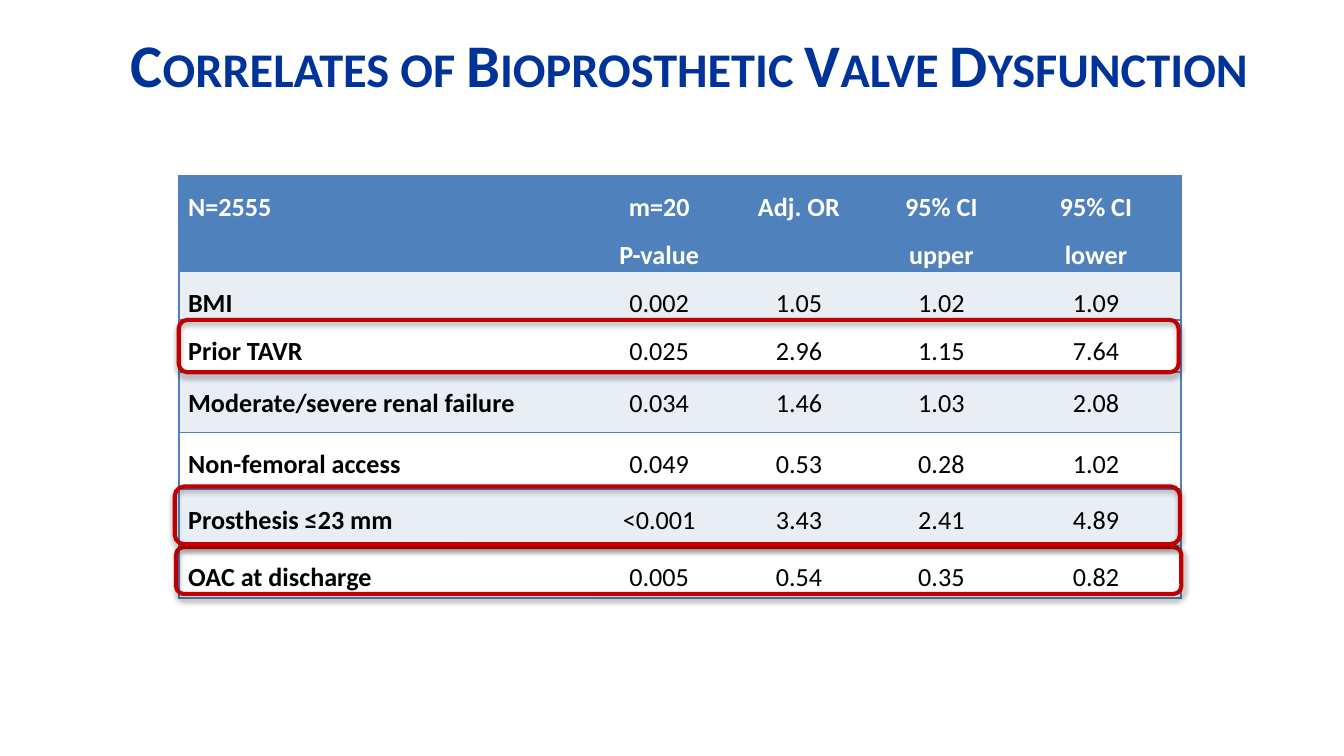
import itertools

import pptx
import pptx.dml.color
import pptx.enum.shapes
import pptx.enum.text
import pptx.oxml
import pptx.oxml.ns
import pptx.util

Inches, Pt = pptx.util.Inches, pptx.util.Pt
PP_ALIGN = pptx.enum.text.PP_ALIGN
ANCHOR = pptx.enum.text.MSO_ANCHOR

THEME = {
    "font": "Calibri", "title_size": 32.4, "cell_size": 14,
    "title": "003399", "header": "4F81BD", "band": "E9EDF4", "plain": "FFFFFF",
    "header_text": "FFFFFF", "body_text": "000000", "grid": "4F81BD",
    "highlight": "C00000", "shadow": "000000",
}
NS = pptx.oxml.ns.nsdecls("a")


def rgb(part):
    return pptx.dml.color.RGBColor.from_string(THEME[part])


def style_run(run, size, color, bold):
    formats = {"name": THEME["font"], "size": Pt(THEME[size]), "bold": bold}
    for attribute, value in formats.items():
        setattr(run.font, attribute, value)
    run.font.color.rgb = rgb(color)


# Widescreen slide, 16:9
deck = pptx.Presentation()
deck.slide_width = Inches(10)
deck.slide_height = deck.slide_width * 9 // 16
slide = deck.slides.add_slide(deck.slide_layouts[6])

# Title in small capitals
title = slide.shapes.add_textbox(Inches(0.63), 0, Inches(9), Inches(0.94)).text_frame
title.word_wrap = True
title.vertical_anchor = ANCHOR.MIDDLE
heading = title.paragraphs[0]
heading.alignment = PP_ALIGN.CENTER
heading_run = heading.add_run()
heading_run.text = "Correlates of Bioprosthetic Valve Dysfunction"
style_run(heading_run, "title_size", "title", True)
heading_run.font._element.set("cap", "small")

# Table grid
correlates = [
    ["N=2555", "m=20\nP-value", "Adj. OR", "95% CI upper", "95% CI lower"],
    ["BMI", "0.002", "1.05", "1.02", "1.09"],
    ["Prior TAVR", "0.025", "2.96", "1.15", "7.64"],
    ["Moderate/severe renal failure", "0.034", "1.46", "1.03", "2.08"],
    ["Non-femoral access", "0.049", "0.53", "0.28", "1.02"],
    ["Prosthesis ≤23 mm", "<0.001", "3.43", "2.41", "4.89"],
    ["OAC at discharge", "0.005", "0.54", "0.35", "0.82"],
]
left, top = 1.33, 1.31
col_widths = [3.08, 1.01, 1.07, 1.05, 1.25]
row_heights = [0.71, 0.36, 0.39, 0.45, 0.42, 0.42, 0.39]
row_tops = list(itertools.accumulate(row_heights, initial=top))
table_width = sum(col_widths)

frame = slide.shapes.add_table(
    len(row_heights), len(col_widths), Inches(left), Inches(top),
    Inches(table_width), Inches(sum(row_heights)))
table = frame.table
no_style = "{2D5ABB26-0587-4C30-8999-92F81FD0307C}"
table._tbl.tblPr.find(pptx.oxml.ns.qn("a:tableStyleId")).text = no_style
for column, width in zip(table.columns, col_widths):
    column.width = Inches(width)
for row, height in zip(table.rows, row_heights):
    row.height = Inches(height)

# Cells: outer sides and every horizontal line are ruled
cell_format = {
    "margin_left": Inches(0.07), "margin_right": Inches(0.07),
    "margin_top": 0, "margin_bottom": 0, "vertical_anchor": ANCHOR.TOP,
}
for r, texts in enumerate(correlates):
    for c, text in enumerate(texts):
        cell = table.cell(r, c)
        cell.text = text
        for attribute, value in cell_format.items():
            setattr(cell, attribute, value)
        sides = ["L"] * (c == 0) + ["R"] * (c == len(texts) - 1) + ["T", "B"]
        for side in sides:
            cell._tc.get_or_add_tcPr().append(pptx.oxml.parse_xml(
                f'<a:ln{side} {NS} w="{Pt(1)}"><a:solidFill>'
                f'<a:srgbClr val="{THEME["grid"]}"/></a:solidFill></a:ln{side}>'))
        cell.fill.solid()
        cell.fill.fore_color.rgb = rgb("header" if r == 0 else "band" if r % 2 else "plain")
        for paragraph in cell.text_frame.paragraphs:
            paragraph.line_spacing = 1.5
            paragraph.alignment = PP_ALIGN.CENTER if c else PP_ALIGN.LEFT
            if c:
                properties = paragraph._p.get_or_add_pPr()
                properties.set("marL", str(Inches(0.04)))
                properties.set("marR", str(Inches(0.06)))
            style_run(paragraph.runs[0], "cell_size",
                      "body_text" if r else "header_text", r == 0 or c == 0)

# Highlighted rows: row, left shift, top shift, width change, height change
highlights = [
    (2, 0, 0, -0.02, 0),
    (6, -0.02, 0.01, 0.02, -0.04),
    (5, -0.03, -0.02, 0.02, 0.01),
]
for r, dx, dy, dw, dh in highlights:
    highlight = slide.shapes.add_shape(
        pptx.enum.shapes.MSO_SHAPE.ROUNDED_RECTANGLE,
        Inches(left + dx), Inches(row_tops[r] + dy),
        Inches(table_width + dw), Inches(row_heights[r] + dh))
    highlight.fill.background()
    highlight.line.color.rgb = rgb("highlight")
    highlight.line.width = Pt(2.25)
    highlight.shadow.inherit = False
    effects = highlight._element.spPr.find(pptx.oxml.ns.qn("a:effectLst"))
    effects.append(pptx.oxml.parse_xml(
        f'<a:outerShdw {NS} blurRad="{Pt(3.1)}" dist="{Pt(1.8)}" dir="5400000" '
        f'rotWithShape="0"><a:srgbClr val="{THEME["shadow"]}">'
        '<a:alpha val="35000"/></a:srgbClr></a:outerShdw>'))

deck.save("out.pptx")
